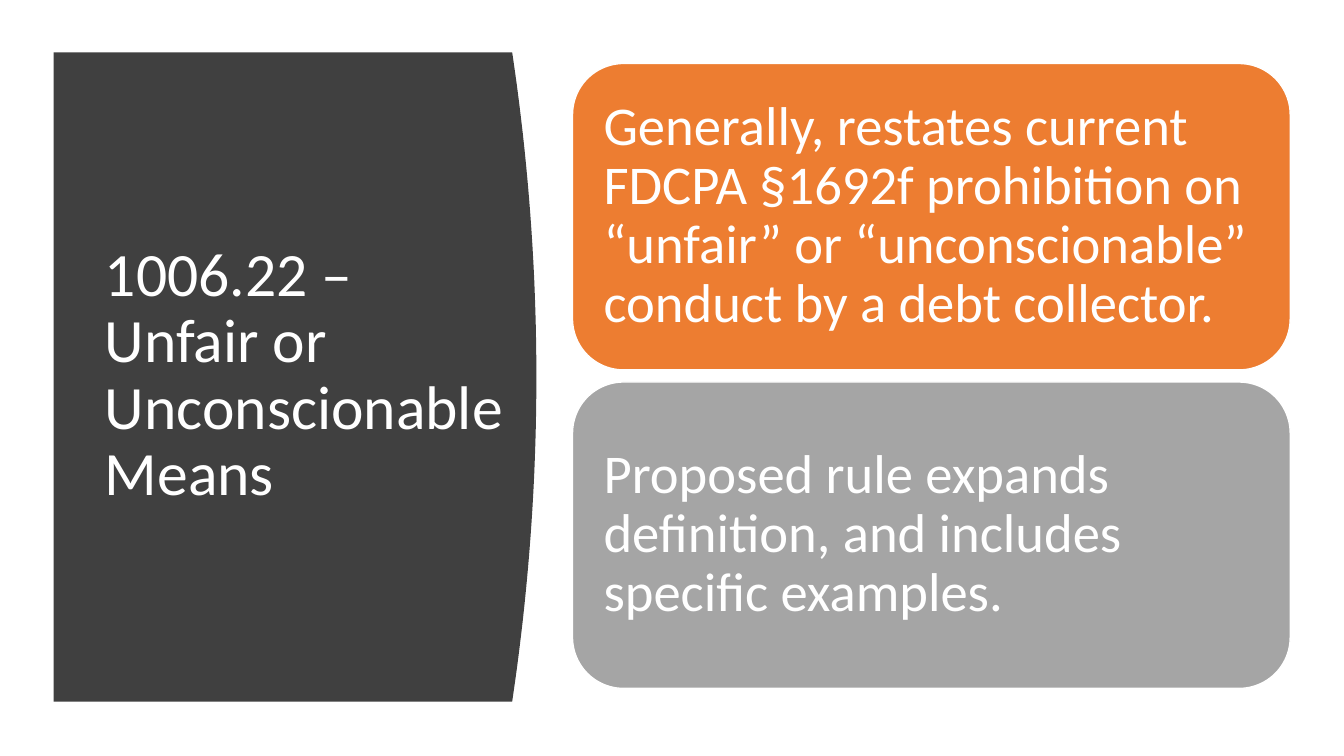
from dataclasses import dataclass

from pptx import Presentation
from pptx.dml.color import RGBColor
from pptx.enum.shapes import MSO_SHAPE as Shape
from pptx.enum.text import MSO_ANCHOR as Anchor, MSO_AUTO_SIZE as AutoSize, PP_ALIGN as Align
from pptx.util import Inches, Pt

SLIDE_W, SLIDE_H = Inches(13.33), Inches(7.5)
FONT = "Calibri"
COLORS = {
    "white": "FFFFFF",
    "panel": "404040",
    "orange": "ED7D31",
    "gray": "A5A5A5",
}


# Positions are percentages of the slide's width and height
@dataclass(frozen=True)
class Box:
    left: float
    top: float
    width: float
    height: float

    def emu(self) -> tuple[int, int, int, int]:
        return px(self.left), py(self.top), px(self.width), py(self.height)


@dataclass(frozen=True)
class Card:
    text: str
    color: str


PANEL = Box(3.98, 6.93, 35.93, 85.87)
PANEL_BULGE = 1.8
CURVE_STEPS = 40
TITLE = Box(7.05, 14.8, 31.58, 69.87)
FIRST_CARD = Box(42.6, 8.4, 53.4, 40.53)
CARD_PITCH = 42.13

CARDS = [
    Card("Generally, restates current FDCPA §1692f prohibition on “unfair” or "
         "“unconscionable” conduct by a debt collector.", "orange"),
    Card("Proposed rule expands definition, and includes specific examples.", "gray"),
]


def px(percent: float) -> int:
    return round(SLIDE_W * percent / 100)


def py(percent: float) -> int:
    return round(SLIDE_H * percent / 100)


def rgb(name: str) -> RGBColor:
    return RGBColor.from_string(COLORS[name])


def write(tf, text: str, size: float) -> None:
    tf.word_wrap = True
    tf.auto_size = AutoSize.NONE
    tf.vertical_anchor = Anchor.MIDDLE
    p = tf.paragraphs[0]
    p.alignment = Align.LEFT
    p.line_spacing = 0.9
    r = p.add_run()
    r.text = text
    r.font.name = FONT
    r.font.size = Pt(size)
    r.font.color.rgb = rgb("white")


def add_panel(slide) -> None:
    """Draw the dark panel, its right edge a shallow parabola, behind the title."""
    left, top, width, height = PANEL.emu()
    edge = []
    for step in range(CURVE_STEPS + 1):
        t = step / CURVE_STEPS
        inset = px(PANEL_BULGE) * (2 * t - 1) ** 2
        edge.append((round(left + width - inset), round(top + height * t)))
    builder = slide.shapes.build_freeform(left, top)
    builder.add_line_segments(edge + [(left, top + height)], close=True)
    sp = builder.convert_to_shape()
    sp.shadow.inherit = False
    sp.fill.solid()
    sp.fill.fore_color.rgb = rgb("panel")
    sp.line.fill.background()
    slide.shapes._spTree.insert(2, sp._element)


def add_title(slide, text: str) -> None:
    sp = slide.shapes.title
    sp.left, sp.top, sp.width, sp.height = TITLE.emu()
    write(sp.text_frame, text, 44)


def add_card(slide, card: Card, row: int) -> None:
    box = Box(FIRST_CARD.left, FIRST_CARD.top + row * CARD_PITCH,
              FIRST_CARD.width, FIRST_CARD.height)
    sp = slide.shapes.add_shape(Shape.ROUNDED_RECTANGLE, *box.emu())
    sp.shadow.inherit = False
    sp.fill.solid()
    sp.fill.fore_color.rgb = rgb(card.color)
    sp.line.color.rgb = rgb("white")
    sp.line.width = Pt(1)
    tf = sp.text_frame
    tf.margin_left = tf.margin_right = tf.margin_top = tf.margin_bottom = Inches(0.16)
    write(tf, card.text, 39)


def main() -> None:
    prs = Presentation()
    prs.slide_width, prs.slide_height = SLIDE_W, SLIDE_H
    slide = prs.slides.add_slide(prs.slide_layouts[5])

    # Left: title on the dark panel
    add_panel(slide)
    add_title(slide, "1006.22 – Unfair or Unconscionable Means")

    # Right: stacked cards
    for row, card in enumerate(CARDS):
        add_card(slide, card, row)

    prs.save("out.pptx")


if __name__ == "__main__":
    main()
